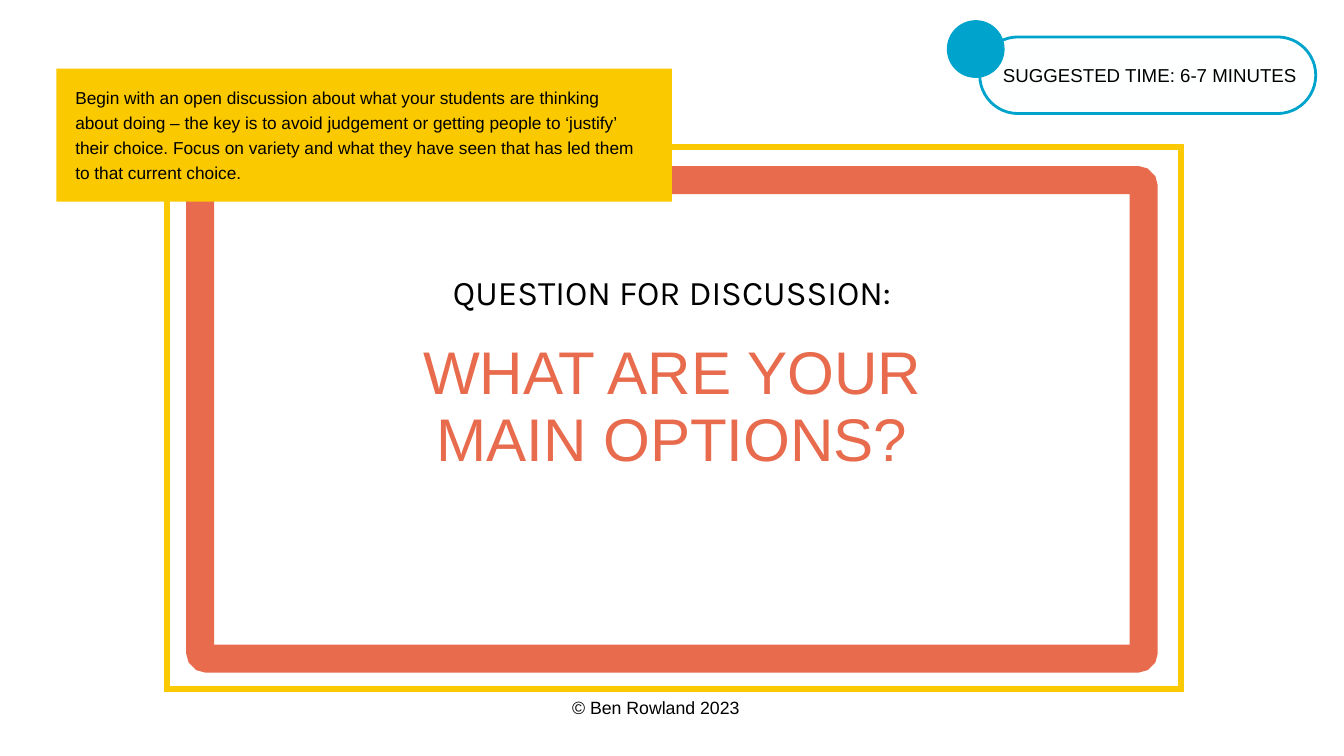
import pptx
import pptx.dml.color
import pptx.enum.shapes
import pptx.enum.text
import pptx.oxml
import pptx.oxml.ns
import pptx.util

COLUMNS, ROWS = 20, 11.25
YELLOW, CORAL, TEAL, BLACK, WHITE = "FBC900", "E76B4C", "00A3CC", "000000", "FEFFFF"
KIND = pptx.enum.shapes.MSO_SHAPE
ALIGN = pptx.enum.text.PP_ALIGN

deck = pptx.Presentation()
deck.slide_width = pptx.util.Inches(COLUMNS)
deck.slide_height = pptx.util.Inches(ROWS)
slide = deck.slides.add_slide(deck.slide_layouts[6])


def grid(column, row, columns, rows):
    """Turn grid columns and rows into left, top, width and height."""
    across, down = deck.slide_width / COLUMNS, deck.slide_height / ROWS
    return [round(n) for n in (column * across, row * down, columns * across, rows * down)]


def rgb(color):
    return pptx.dml.color.RGBColor.from_string(color)


# preset, place, corner rounding, fill, line colour, line width
panels = [
    (KIND.RECTANGLE, (2.48, 2.19, 15.09, 8.06), None, None, YELLOW, 6.75),
    (KIND.ROUNDED_RECTANGLE, (2.98, 2.68, 14.04, 7.12), 0.014, None, CORAL, 30),
    (KIND.ROUNDED_RECTANGLE, (14.58, 0.55, 5, 1.14), 0.5, WHITE, TEAL, 3),
    (KIND.OVAL, (14.09, 0.3, 0.86, 0.86), None, TEAL, None, None),
    (KIND.RECTANGLE, (0.84, 1.02, 9.16, 1.98), None, YELLOW, None, None),
]
for preset, place, rounding, fill, line, weight in panels:
    panel = slide.shapes.add_shape(preset, *grid(*place))
    panel.shadow.inherit = False
    if rounding:
        panel.adjustments[0] = rounding
    if fill:
        panel.fill.solid()
        panel.fill.fore_color.rgb = rgb(fill)
    else:
        panel.fill.background()
    if line:
        panel.line.color.rgb = rgb(line)
        panel.line.width = pptx.util.Pt(weight)
        miter = pptx.oxml.parse_xml(f'<a:miter {pptx.oxml.ns.nsdecls("a")} lim="800000"/>')
        panel.line.fill._xPr.append(miter)
    else:
        panel.line.fill.background()

# wording, place, font, size, line spacing, colour, alignment
wordings = [
    ("WHAT ARE YOUR MAIN OPTIONS?", (5.09, 5.07, 9.82, 1.99),
     "Arial", 64.5, 71, CORAL, ALIGN.CENTER),
    ("QUESTION FOR DISCUSSION:", (5.47, 3.84, 9.06, 0.75),
     "Karla", 37, 58.1, BLACK, ALIGN.CENTER),
    ("© Ben Rowland 2023", (8.51, 10.32, 2.5, 0.35),
     "Arial", 19, 26.6, BLACK, ALIGN.CENTER),
    ("SUGGESTED TIME: 6-7 MINUTES", (14.74, 0.9, 4.74, 0.38),
     "Arial", 20, 28, BLACK, ALIGN.CENTER),
    ("Begin with an open discussion about what your students are thinking about doing – "
     "the key is to avoid judgement or getting people to ‘justify’ their choice. Focus on "
     "variety and what they have seen that has led them to that current choice.",
     (1.12, 1.24, 8.31, 1.48), "Arial", 18.5, 26.6, BLACK, ALIGN.LEFT),
]
for wording, place, font, size, spacing, color, alignment in wordings:
    frame = slide.shapes.add_textbox(*grid(*place)).text_frame
    frame_format = {"word_wrap": True, "margin_left": 0, "margin_top": 0,
                    "margin_right": 0, "margin_bottom": 0}
    for name, value in frame_format.items():
        setattr(frame, name, value)
    paragraph = frame.paragraphs[0]
    paragraph.alignment = alignment
    paragraph.line_spacing = pptx.util.Pt(spacing)
    run = paragraph.add_run()
    run.text = wording
    for name, value in {"name": font, "size": pptx.util.Pt(size)}.items():
        setattr(run.font, name, value)
    run.font.color.rgb = rgb(color)

deck.save("out.pptx")
